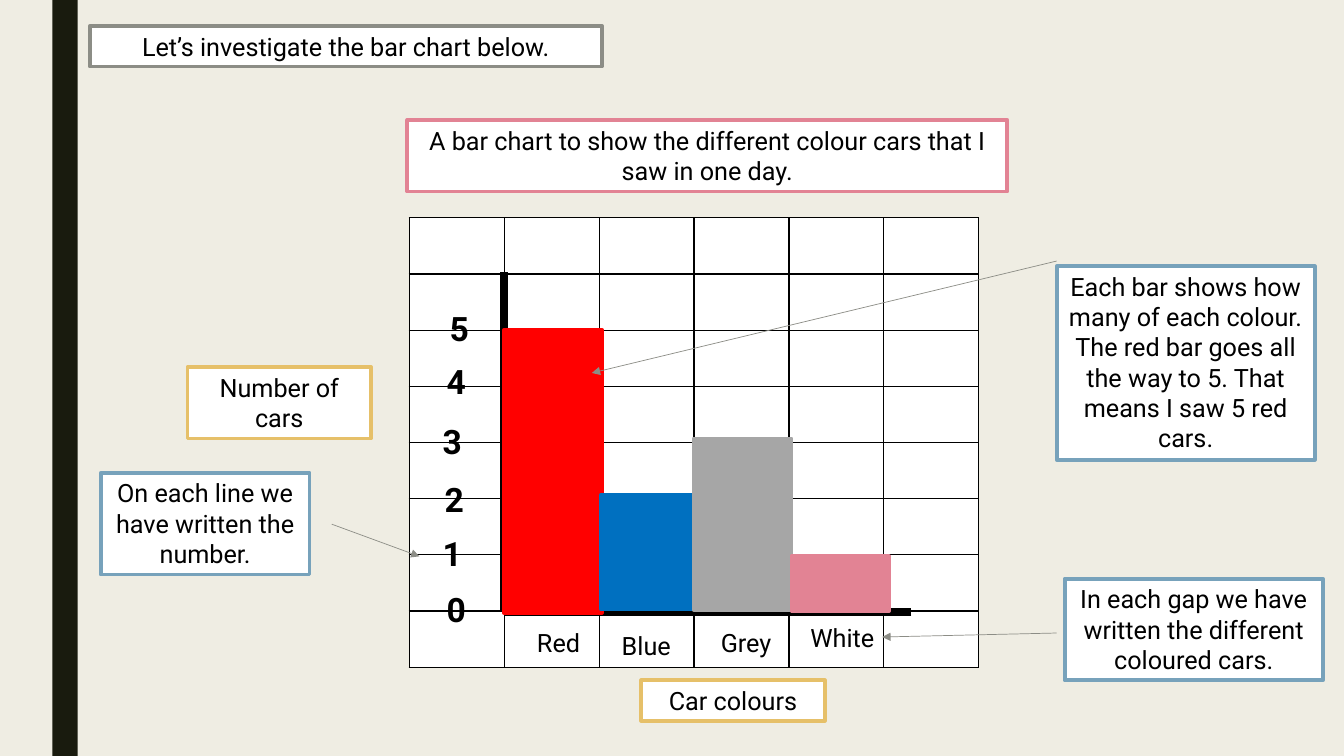
from pptx import Presentation
from pptx.dml.color import RGBColor
from pptx.enum.shapes import MSO_CONNECTOR, MSO_SHAPE
from pptx.enum.text import MSO_AUTO_SIZE, PP_ALIGN
from pptx.oxml import parse_xml
from pptx.oxml.ns import nsdecls, qn
from pptx.util import Inches, Pt
from lxml import etree

FONT = "Roboto"
BLACK, WHITE, CREAM, DARK = "000000", "FFFFFF", "EFEDE3", "191B0E"
GREY, PINK, GOLD, BLUE = "8C8D86", "E28394", "E6C069", "77A2BB"

GRID = dict(left=4.06, top=2.16, width=5.65, height=4.46, rows=8, cols=6)
AXES = [((5, 2.7), (5, 6.07)), ((9.04, 6.07), (5, 6.07))]
BOXES = [
    ((0.89, 0.26, 5.08, 0.4), GREY, ["Let’s investigate the bar chart below."]),
    ((4.04, 1.19, 5.95, 0.71), PINK,
     ["A bar chart to show the different colour cars that I saw in one day."]),
    ((1.86, 3.64, 1.82, 0.71), GOLD, ["Number of cars"]),
    ((6.36, 6.75, 1.82, 0.4), GOLD, ["Car colours"]),
    ((10.56, 5.74, 2.56, 1.01), BLUE,
     ["In each gap we have written the different coloured cars."]),
    ((1, 4.69, 2.07, 1.01), BLUE, ["On each line we have written the number."]),
    ((10.48, 2.64, 2.56, 1.92), BLUE,
     ["Each bar shows how many of each colour.",
      "The red bar goes all the way to 5. That means I saw 5 red cars."]),
]
CAR_LABELS = [("Red", 5.14, 6.17, 0.8), ("Blue", 6.01, 6.2, 0.8),
              ("Grey", 7, 6.17, 0.8), ("White", 7.84, 6.12, 1.03)]
NUMBERS = [("0", 4.01, 5.79), ("1", 3.97, 5.24), ("2", 3.99, 4.7),
           ("3", 3.97, 4.13), ("4", 4.01, 3.53), ("5", 4.04, 3.01)]
BARS = [("FF0000", 5, 3.27, 2.81), ("0070C0", 5.96, 4.91, 1.13),
        ("A6A6A6", 6.88, 4.35, 1.7), (PINK, 7.85, 5.52, 0.54)]
BAR_WIDTH = 0.97
ARROWS = [((10.48, 6.28), (8.75, 6.32)), ((3.29, 5.2), (4.16, 5.52)),
          ((10.48, 2.59), (5.87, 3.7))]


def rgb(value):
    """Turn a hex string into a colour."""
    return RGBColor.from_string(value)


def paint(s, fill, line=None):
    """Fill a shape and draw or hide its outline."""
    s.fill.solid()
    s.fill.fore_color.rgb = rgb(fill)
    if line:
        s.line.color.rgb = rgb(line)
        s.line.width = Pt(2.75)
    else:
        s.line.fill.background()


def add_rect(slide, at, fill, line=None):
    """Add a plain rectangle."""
    s = slide.shapes.add_shape(MSO_SHAPE.RECTANGLE, *map(Inches, at))
    s.shadow.inherit = False
    paint(s, fill, line)


def add_text(slide, at, paragraphs, size=18, bold=False):
    """Add a centred text box and return it."""
    s = slide.shapes.add_textbox(*map(Inches, at))
    tf = s.text_frame
    tf.word_wrap = True
    tf.auto_size = MSO_AUTO_SIZE.SHAPE_TO_FIT_TEXT
    for i, text in enumerate(paragraphs):
        p = tf.add_paragraph() if i else tf.paragraphs[0]
        p.alignment = PP_ALIGN.CENTER
        r = p.add_run()
        r.text = text
        r.font.name = FONT
        r.font.size = Pt(size)
        r.font.bold = bold
        r.font.color.rgb = rgb(BLACK)
    return s


def add_line(slide, start, end, color, width, arrow=False):
    """Add a straight line, with an arrowhead at its end on request."""
    s = slide.shapes.add_connector(
        MSO_CONNECTOR.STRAIGHT, *map(Inches, start + end))
    s.line.color.rgb = rgb(color)
    s.line.width = Pt(width)
    if arrow:
        etree.SubElement(s.line._get_or_add_ln(), qn("a:tailEnd"), type="triangle")
    etree.SubElement(s._element.spPr, qn("a:effectLst"))


def add_grid(slide, left, top, width, height, rows, cols):
    """Add the squared background of the bar chart as a table."""
    table = slide.shapes.add_table(
        rows, cols, *map(Inches, (left, top, width, height))).table
    table.first_row = table.horz_banding = False
    for cell in table.iter_cells():
        tcPr = cell._tc.get_or_add_tcPr()
        for side in ("lnL", "lnR", "lnT", "lnB"):
            tcPr.append(parse_xml(
                f'<a:{side} {nsdecls("a")} w="{Pt(1)}"><a:solidFill>'
                f'<a:srgbClr val="{BLACK}"/></a:solidFill></a:{side}>'))
        cell.fill.solid()
        cell.fill.fore_color.rgb = rgb(WHITE)


def main():
    """Build and save the slide."""
    prs = Presentation()
    prs.slide_width, prs.slide_height = Inches(13.33), Inches(7.5)
    slide = prs.slides.add_slide(prs.slide_layouts[6])
    slide.background.fill.solid()
    slide.background.fill.fore_color.rgb = rgb(CREAM)
    add_rect(slide, (0.52, 0, 0.25, 7.5), DARK)
    add_grid(slide, **GRID)
    for start, end in AXES:
        add_line(slide, start, end, BLACK, 6)
    for text, left, top, width in CAR_LABELS:
        add_text(slide, (left, top, width, 0.4), [text])
    for text, left, top in NUMBERS:
        add_text(slide, (left, top, 1.03, 0.5), [text], 24, True)
    for color, left, top, height in BARS:
        add_rect(slide, (left, top, BAR_WIDTH, height), color, color)
    for at, outline, paragraphs in BOXES:
        paint(add_text(slide, at, paragraphs), WHITE, outline)
    for start, end in ARROWS:
        add_line(slide, start, end, GREY, 0.5, True)
    prs.save("out.pptx")


if __name__ == "__main__":
    main()
